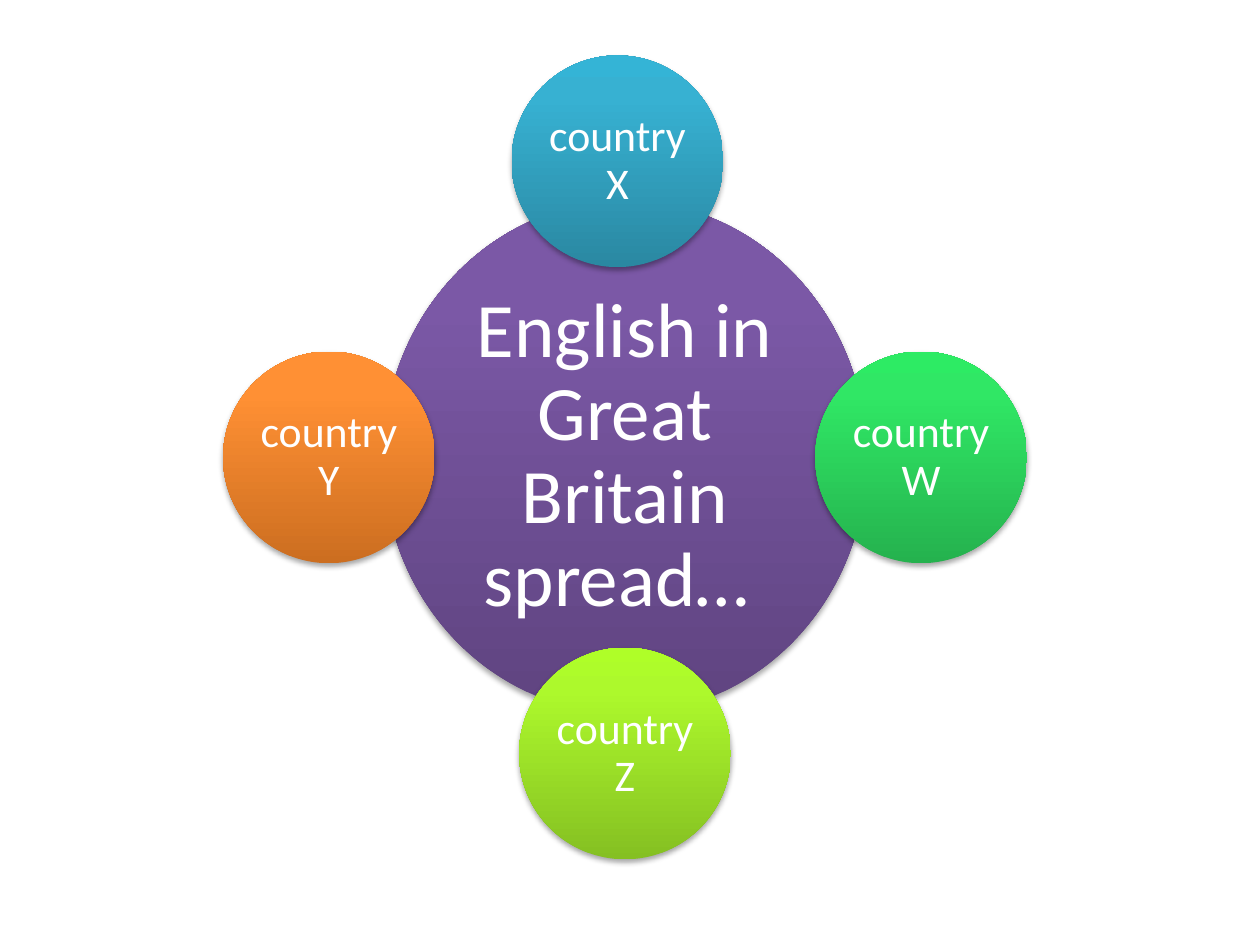
from lxml import etree
from pptx import Presentation
from pptx.dml.color import RGBColor
from pptx.enum import shapes, text
from pptx.oxml import parse_xml
from pptx.oxml.ns import nsdecls, qn
from pptx.util import Inches, Pt

# Gradient stops at 0, 80 and 100 %, running from bottom to top
COLORS = {
    "hub": ("5F4480", "7B58A6", "7C57A8"),
    "X": ("2A88A2", "37B1D2", "34B4D6"),
    "W": ("25B24E", "30E765", "2DEB64"),
    "Z": ("85C022", "ADF92C", "AFFE28"),
    "Y": ("CC6E20", "FF9034", "FF9136"),
    "text": "FFFFFF",
    "shadow": "000000",
}
CX, CY, RADIUS = 4.96, 3.63, 2.35

prs = Presentation()
prs.slide_width, prs.slide_height = Inches(10), Inches(7.5)
s = prs.slides.add_slide(prs.slide_layouts[6])


def style(sp, stops):
    """Give a shape its vertical gradient and a soft shadow below."""
    sp.line.fill.background()
    gs = "".join(f'<a:gs pos="{pos}"><a:srgbClr val="{c}"/></a:gs>'
                 for pos, c in zip((0, 80000, 100000), stops))
    ln = sp._element.spPr.find(qn("a:ln"))
    ln.addprevious(parse_xml(
        f'<a:gradFill {nsdecls("a")} rotWithShape="1"><a:gsLst>{gs}</a:gsLst>'
        '<a:lin ang="16200000" scaled="0"/></a:gradFill>'))
    sp.shadow.inherit = False
    effects = sp._element.spPr.find(qn("a:effectLst"))
    shadow = etree.SubElement(effects, qn("a:outerShdw"), blurRad=str(Pt(3.1)),
                              dist=str(Pt(1.8)), dir="5400000", rotWithShape="0")
    color = etree.SubElement(shadow, qn("a:srgbClr"), val=COLORS["shadow"])
    etree.SubElement(color, qn("a:alpha"), val="35000")


def add_circle(cx, cy, w, h, label, size, inset, stops):
    """Add a labelled ellipse around a centre point."""
    sp = s.shapes.add_shape(shapes.MSO_SHAPE.OVAL, Inches(cx - w / 2),
                            Inches(cy - h / 2), Inches(w), Inches(h))
    style(sp, stops)
    tf = sp.text_frame
    frame = {"word_wrap": True, "vertical_anchor": text.MSO_ANCHOR.MIDDLE}
    for side in ("left", "top", "right", "bottom"):
        frame[f"margin_{side}"] = Inches(inset)
    for name, value in frame.items():
        setattr(tf, name, value)
    p = tf.paragraphs[0]
    p.alignment, p.line_spacing = text.PP_ALIGN.CENTER, 0.9
    r = p.add_run()
    r.text = label
    for name, value in {"name": "Calibri", "size": Pt(size)}.items():
        setattr(r.font, name, value)
    r.font.color.rgb = RGBColor.from_string(COLORS["text"])


# Central circle
add_circle(CX, CY, 3.84, 4.07, "English in Great Britain spread… ", 44, 0.06,
           COLORS["hub"])

# Country circles on a ring around it; the top one sits slightly left
for name, dx, dy in (("X", -0.06, -RADIUS), ("W", RADIUS, 0),
                     ("Z", 0, RADIUS), ("Y", -RADIUS, 0)):
    add_circle(CX + dx, CY + dy, 1.68, 1.68, f"country {name}", 25, 0.03,
               COLORS[name])

prs.save("out.pptx")
